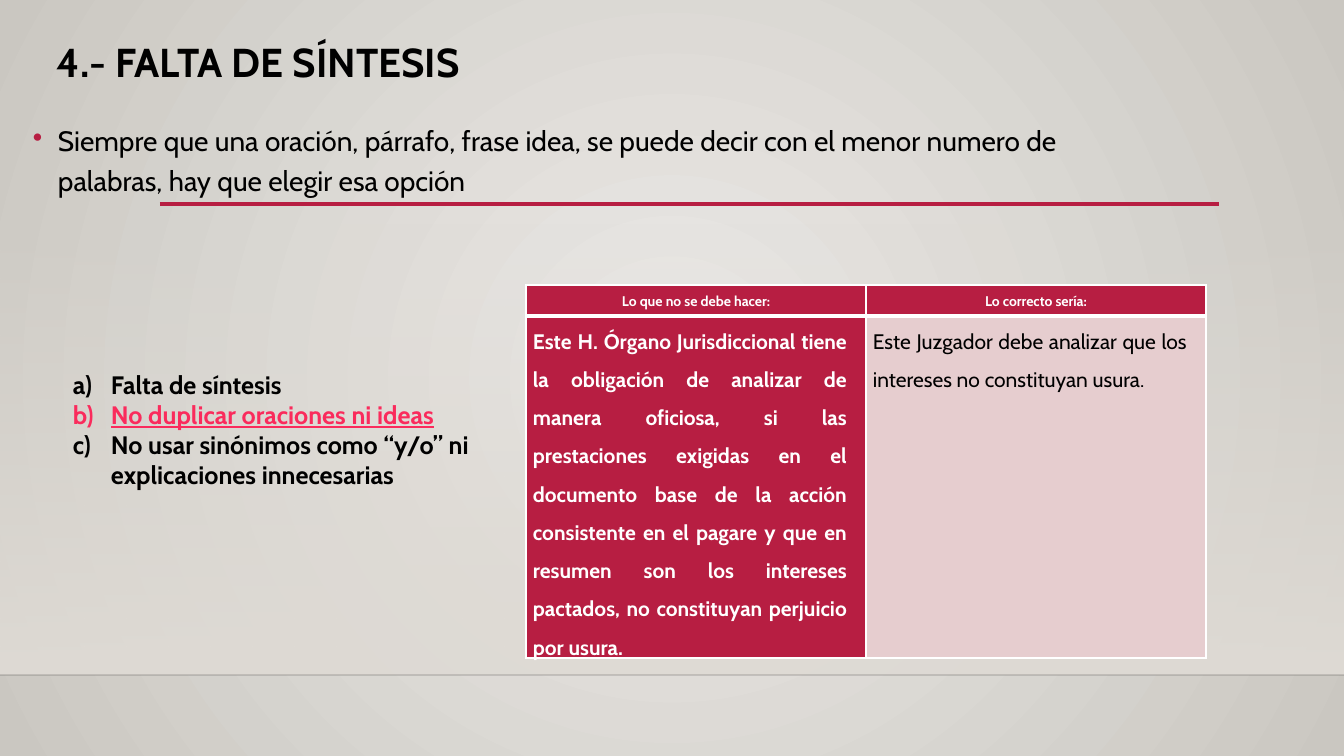
from pptx import Presentation
from pptx.util import Emu, Pt
from pptx.dml.color import RGBColor as RGB
from pptx.enum.shapes import MSO_SHAPE as SHAPE, MSO_CONNECTOR as LINK
from pptx.enum.text import PP_ALIGN as AL, MSO_ANCHOR as ANCHOR
from pptx.oxml import parse_xml
from pptx.oxml.ns import qn, nsdecls
from lxml.etree import SubElement as sub

HUE = dict(ink="000000", edge="000001", white="FFFFFF", red="B71E42", rose="E6CDCF",
           pink="FA2B5C", light="ECEAE7", dark="CAC7C1", floor="DFDBD5")
SIZE = 1344, 756
TITLE = "4.- FALTA DE SÍNTESIS"
LEAD = ("Siempre que una oración, párrafo, frase idea, se puede decir con el menor "
        "numero de palabras, hay que elegir esa opción")
POINTS = [
    ("Falta de síntesis", "ink", False),
    ("No duplicar oraciones ni ideas", "pink", True),
    ("No usar sinónimos como “y/o” ni explicaciones innecesarias", "ink", False),
]
CELLS = [
    ["Lo que no se debe hacer:", "Lo correcto sería:"],
    ["Este H. Órgano Jurisdiccional tiene la obligación de analizar de manera oficiosa, "
     "si las prestaciones exigidas en el documento base de la acción consistente en el "
     "pagare y que en resumen son los intereses pactados, no constituyan perjuicio por usura.",
     "Este Juzgador debe analizar que los intereses no constituyan usura."],
]
COLS = [340, 340]
ROWS = [31, 342]
RULES = [
    ((0, 675, 1344, 675), "edge", 1, 20),
    ((160, 204, 1219, 204), "red", 2.5, 100),
]


def px(n):
    return Emu(round(n * 914400 / 100.8))


def box(*dims):
    return [px(n) for n in dims]


def put(obj, **vals):
    for key, val in vals.items():
        setattr(obj, key, val)


def style(font, size, hue, **more):
    put(font, name="Cabin", size=Pt(size), **more)
    font.color.rgb = RGB.from_string(HUE[hue])


def blend(owner, root, stops, way):
    owner.fill.solid()
    solid = root.find(".//" + qn("a:solidFill"))
    marks = "".join(
        f'<a:gs pos="{pos}"><a:srgbClr val="{HUE[hue]}"><a:alpha val="{alpha * 1000}"/>'
        f'</a:srgbClr></a:gs>' for pos, hue, alpha in stops)
    grad = f'<a:gradFill {nsdecls("a")} rotWithShape="1"><a:gsLst>{marks}</a:gsLst>{way}</a:gradFill>'
    solid.getparent().replace(solid, parse_xml(grad))


def text(dims, anchor=ANCHOR.TOP):
    frame = slide.shapes.add_textbox(*box(*dims)).text_frame
    put(frame, word_wrap=True, vertical_anchor=anchor)
    return frame


def bullet(para, indent, tag, hue=None, **attrs):
    props = para._p.get_or_add_pPr()
    props.set("marL", str(px(indent)))
    props.set("indent", str(-px(indent)))
    if hue:
        sub(sub(props, qn("a:buClr")), qn("a:srgbClr"), val=HUE[hue])
    sub(props, qn(tag), **attrs)


def border(cell, widths):
    props = cell._tc.get_or_add_tcPr()
    for spot, (side, width) in enumerate(zip("LRTB", widths)):
        line = parse_xml(
            f'<a:ln{side} {nsdecls("a")} w="{Pt(width)}"><a:solidFill>'
            f'<a:srgbClr val="{HUE["white"]}"/></a:solidFill></a:ln{side}>')
        props.insert(spot, line)


deck = Presentation()
put(deck, slide_width=px(SIZE[0]), slide_height=px(SIZE[1]))
slide = deck.slides.add_slide(deck.slide_layouts[6])

blend(slide.background, slide.element, [(0, "light", 100), (100000, "dark", 100)],
      '<a:path path="circle"><a:fillToRect l="50000" t="50000" r="50000" b="50000"/></a:path>')
floor = slide.shapes.add_shape(SHAPE.RECTANGLE, *box(0, 223, 1344, 452))
floor.shadow.inherit = False
floor.line.fill.background()
blend(floor, floor._element.spPr, [(0, "floor", 0), (100000, "floor", 100)],
      '<a:lin ang="5400000" scaled="0"/>')

for ends, hue, width, alpha in RULES:
    rule = slide.shapes.add_connector(LINK.STRAIGHT, *box(*ends))
    rule.line.width = Pt(width)
    rule.line.color.rgb = RGB.from_string(HUE[hue])
    props = rule._element.spPr
    sub(props.find(".//" + qn("a:srgbClr")), qn("a:alpha"), val=str(alpha * 1000))
    sub(props, qn("a:effectLst"))

head = text((47, 37, 1058, 54), ANCHOR.MIDDLE).paragraphs[0]
put(head, text=TITLE, line_spacing=0.9)
style(head.runs[0].font, 28.8, "ink", bold=True)

lead = text((23, 112, 1058, 88)).paragraphs[0]
put(lead, text=LEAD, line_spacing=1.2)
bullet(lead, 25, "a:buChar", "red", char="•")
style(lead.runs[0].font, 20, "ink")

frame = text((63, 364, 418, 163))
for spot, (words, hue, under) in enumerate(POINTS):
    para = frame.add_paragraph() if spot else frame.paragraphs[0]
    para.text = words
    bullet(para, 38, "a:buAutoNum", type="alphaLcParenR")
    style(para.runs[0].font, 18, hue, bold=True, underline=under)

table = slide.shapes.add_table(2, 2, *box(526, 285, sum(COLS), sum(ROWS))).table
for col, width in zip(table.columns, COLS):
    col.width = px(width)
for row, height in zip(table.rows, ROWS):
    row.height = px(height)
for r, line in enumerate(CELLS):
    for c, words in enumerate(line):
        cell = table.cell(r, c)
        plain = r == 1 and c == 1
        put(cell, margin_left=px(7), margin_right=px(19 if r else 7),
            margin_top=0, margin_bottom=0)
        cell.fill.solid()
        cell.fill.fore_color.rgb = RGB.from_string(HUE["rose" if plain else "red"])
        border(cell, (1, 1, 3 if r else 1, 1) if r == 0 else (1, 1, 3, 1))
        if r == 0:
            cell._tc.tcPr.find(qn("a:lnB")).set("w", str(Pt(3)))
        para = cell.text_frame.paragraphs[0]
        put(para, text=words, line_spacing=1.5, alignment=AL.JUSTIFY if r else AL.CENTER)
        style(para.runs[0].font, 15 if r else 10, "ink" if plain else "white", bold=not plain)

deck.save("out.pptx")
